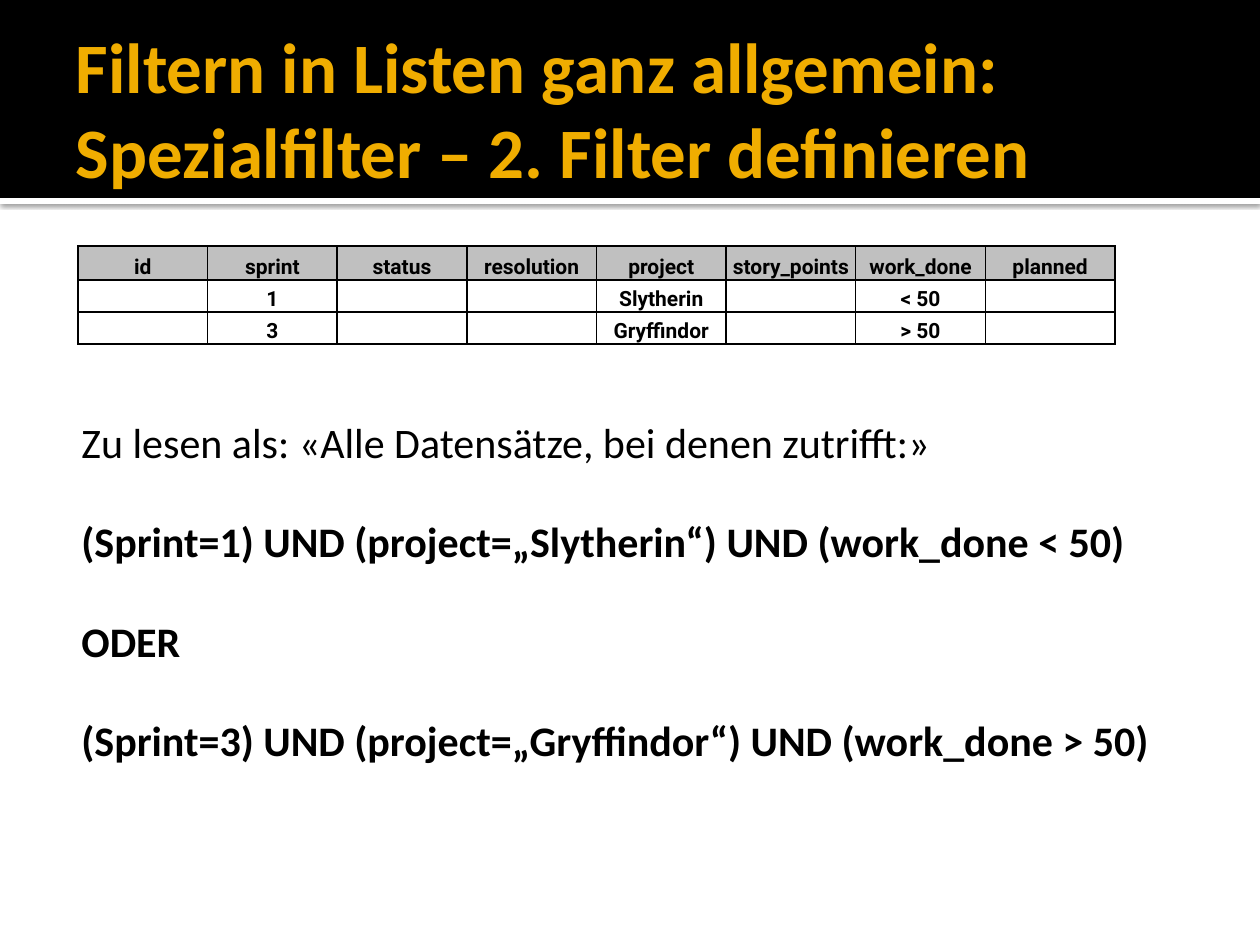
from lxml import etree
from pptx import Presentation
from pptx.dml.color import RGBColor
from pptx.enum.shapes import MSO_SHAPE
from pptx.enum.text import MSO_ANCHOR, MSO_AUTO_SIZE, PP_ALIGN
from pptx.oxml.ns import qn
from pptx.util import Emu, Pt

BLACK = RGBColor(0x00, 0x00, 0x00)
WHITE = RGBColor(0xFF, 0xFF, 0xFF)
GOLD = RGBColor(0xF0, 0xAD, 0x00)
GREY = RGBColor(0xC0, 0xC0, 0xC0)
RECTANGLE = MSO_SHAPE.RECTANGLE
MIDDLE, BOTTOM = MSO_ANCHOR.MIDDLE, MSO_ANCHOR.BOTTOM
LEFT, CENTER = PP_ALIGN.LEFT, PP_ALIGN.CENTER
NO_FIT = MSO_AUTO_SIZE.NONE
PX = 914400 / 126
TITLE_ONLY = 5

TITLE_LINES = [
    "Filtern in Listen ganz allgemein:",
    "Spezialfilter – 2. Filter definieren",
]
CRITERIA = [
    ["id", "sprint", "status", "resolution", "project", "story_points", "work_done", "planned"],
    ["", "1", "", "", "Slytherin", "", "< 50", ""],
    ["", "3", "", "", "Gryffindor", "", "> 50", ""],
]
READING = [
    ("Zu lesen als: «Alle Datensätze, bei denen zutrifft:»", False),
    ("(Sprint=1) UND (project=„Slytherin“) UND (work_done < 50)", True),
    ("ODER", True),
    ("(Sprint=3) UND (project=„Gryffindor“) UND (work_done > 50)", True),
]


def px(*lengths):
    return [Emu(round(length * PX)) for length in lengths]


class SlideWriter:
    """Draws styled elements on the current slide."""

    text_font = "Calibri"
    table_font = "Roboto"

    def __init__(self, page):
        self.page = page

    def span(self, para, text, size, color=BLACK, bold=True, font=text_font):
        span = para.add_run()
        span.text = text
        span.font.name = font
        span.font.size = Pt(size)
        span.font.bold = bold
        span.font.color.rgb = color

    def band(self, area, color, shadow=False):
        shape = self.page.shapes.add_shape(RECTANGLE, *px(*area))
        shape.shadow.inherit = False
        shape.fill.solid()
        shape.fill.fore_color.rgb = color
        shape.line.fill.background()
        if shadow:
            effects = shape._element.spPr.find(qn("a:effectLst"))
            outer = etree.SubElement(effects, qn("a:outerShdw"), blurRad="31750",
                                     dist="10160", dir="5400000", rotWithShape="0")
            tint = etree.SubElement(outer, qn("a:srgbClr"), val=str(BLACK))
            etree.SubElement(tint, qn("a:alpha"), val="60000")

    def title(self, area, lines, size):
        title = self.page.shapes.title
        title.left, title.top, title.width, title.height = px(*area)
        tree = title._element.getparent()
        tree.append(title._element)
        frame = title.text_frame
        frame.auto_size = NO_FIT
        frame.word_wrap = True
        frame.vertical_anchor = MIDDLE
        (frame.margin_left, frame.margin_top,
         frame.margin_right, frame.margin_bottom) = px(13, 6, 6, 6)
        para = frame.paragraphs[0]
        para.alignment = LEFT
        for index, line in enumerate(lines):
            if index:
                para.add_line_break()
            self.span(para, line, size, GOLD)

    def border(self, cell):
        properties = cell._tc.get_or_add_tcPr()
        for side in ("lnL", "lnR", "lnT", "lnB"):
            line = etree.SubElement(properties, qn(f"a:{side}"), w=str(Pt(1)))
            fill = etree.SubElement(line, qn("a:solidFill"))
            etree.SubElement(fill, qn("a:srgbClr"), val=str(BLACK))

    def cell(self, cell, text, size):
        cell.margin_left, cell.margin_top, cell.margin_right, cell.margin_bottom = px(1, 1, 1, 0)
        cell.vertical_anchor = BOTTOM
        para = cell.text_frame.paragraphs[0]
        para.alignment = CENTER
        if text:
            self.span(para, text, size, font=self.table_font)
        else:
            etree.SubElement(para._p, qn("a:endParaRPr"), sz=str(size * 100))
        self.border(cell)

    def table(self, area, rows, heights, size):
        frame = self.page.shapes.add_table(len(rows), len(rows[0]), *px(*area))
        table = frame.table
        table.first_row = table.horz_banding = False
        for row, height, texts in zip(table.rows, px(*heights), rows):
            row.height = height
            for cell, text in zip(row.cells, texts):
                self.cell(cell, text, size)
                cell.fill.background()
        for cell in table.rows[0].cells:
            cell.fill.solid()
            cell.fill.fore_color.rgb = GREY

    def text(self, area, lines, size, gap):
        box = self.page.shapes.add_textbox(*px(*area))
        frame = box.text_frame
        frame.word_wrap = True
        for index, (line, bold) in enumerate(lines):
            para = frame.add_paragraph() if index else frame.paragraphs[0]
            para.space_before = Pt(gap if index else 0)
            self.span(para, line, size, bold=bold)


def main():
    deck = Presentation()
    deck.slide_width, deck.slide_height = px(1260, 945)
    writer = SlideWriter(deck.slides.add_slide(deck.slide_layouts[TITLE_ONLY]))
    writer.band((0, 198, 1260, 6), WHITE, shadow=True)
    writer.band((0, 0, 1260, 198), BLACK)
    writer.title((63, 21, 1134, 173), TITLE_LINES, 40.5)
    writer.table((78, 246, 1037, 98), CRITERIA, (34, 32, 32), 12)
    writer.text((69, 410, 1135, 420), READING, 24, 28)
    deck.save("out.pptx")


if __name__ == "__main__":
    main()
